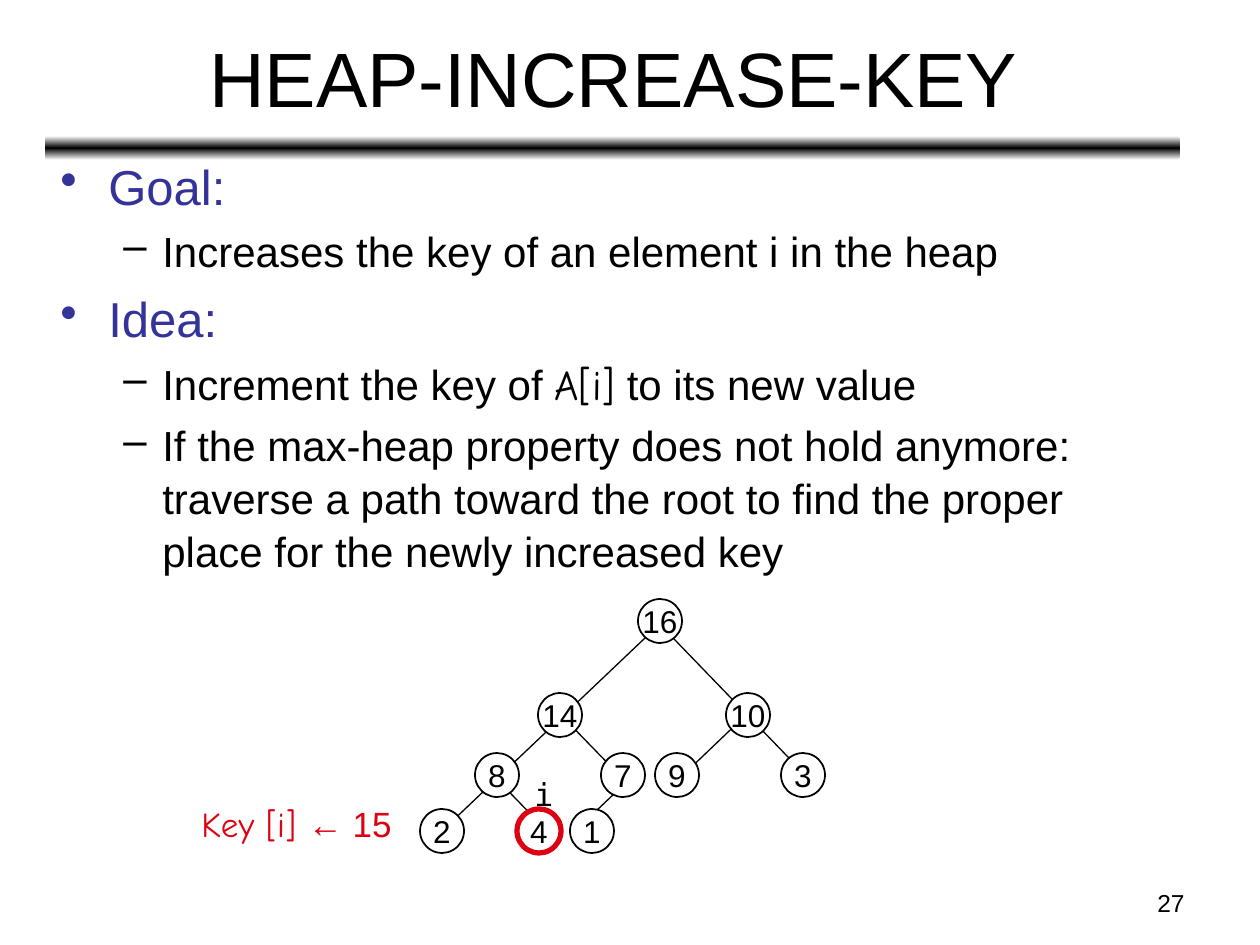
from copy import deepcopy

from pptx import Presentation
from pptx.dml.color import RGBColor
from pptx.enum.shapes import MSO_CONNECTOR, MSO_SHAPE
from pptx.enum.text import MSO_ANCHOR as ANCHOR, PP_ALIGN as ALIGN
from pptx.oxml.ns import qn
from pptx.util import Emu, Pt

PX_PER_INCH = 126
BLACK, WHITE, BLUE, RED = "000000", "FFFFFF", "333399", "DD0111"
SANS, COMIC, MONO = "Arial", "Comic Neue", "DejaVu Sans Mono"

# Bullet mark, left margin and hang (px), text size, colour
LEVELS = [("•", 48, 48, 28, BLUE), ("–", 102, 39, 24, BLACK)]
BODY = [
    (0, [("Goal:", SANS)]),
    (1, [("Increases the key of an element i in the heap", SANS)]),
    (0, [("Idea:", SANS)]),
    (1, [("Increment the key of ", SANS), ("A[i]", COMIC),
         (" to its new value", SANS)]),
    (1, [("If the max-heap property does not hold anymore: traverse a path "
          "toward the root to find the proper place for the newly increased "
          "key", SANS)]),
]

NODE_SIZE = 44
# Top of each heap level, then the key and left of each node on it
HEAP = [
    (599, [(16, 638)]),
    (693, [(14, 538), (10, 726)]),
    (753, [(8, 475), (7, 601), (9, 655), (3, 781)]),
    (809, [(2, 420), (4, 517), (1, 570)]),
]
CHANGED_KEY = 4
# The two outer branches run behind several nodes
EDGES = [
    (576, 830, 633, 776), (678, 780, 748, 713), (551, 835, 483, 765),
    (625, 781, 557, 711), (815, 785, 646, 610), (444, 829, 664, 620),
]


def px(length):
    return Emu(round(length * 914400 / PX_PER_INCH))


def rgb(value):
    return RGBColor.from_string(value)


def add_runs(para, runs, size, color):
    for text, font in runs:
        span = para.add_run()
        span.text = text
        span.font.name = font
        span.font.size = Pt(size)
        span.font.color.rgb = rgb(color)


def add_text(page, frame, runs, size, color=BLACK, align=ALIGN.LEFT,
             anchor=ANCHOR.TOP, wrap=True):
    box = page.shapes.add_textbox(*map(px, frame))
    box.text_frame.word_wrap = wrap
    box.text_frame.vertical_anchor = anchor
    para = box.text_frame.paragraphs[0]
    para.alignment = align
    add_runs(para, runs, size, color)


def add_title_bar(page):
    bar = page.shapes.add_shape(MSO_SHAPE.ROUNDED_RECTANGLE,
                                *map(px, (45, 136, 1135, 24)))
    bar.shadow.inherit = False
    bar.line.fill.background()
    bar.fill.gradient()
    bar.fill.gradient_angle = 90
    stop_list = bar.fill.gradient_stops and next(
        bar._element.spPr.iter(qn("a:gsLst")))
    stop_list.insert(1, deepcopy(stop_list[0]))
    for stop, position, color in zip(bar.fill.gradient_stops, (0, 0.5, 1),
                                     (WHITE, BLACK, WHITE)):
        stop.position = position
        stop.color.rgb = rgb(color)


def set_bullet(para, mark, margin, hang):
    props = para._p.get_or_add_pPr()
    props.set("marL", str(px(margin)))
    props.set("indent", str(-px(hang)))
    props.makeelement(qn("a:buChar"))
    bullet = props.makeelement(qn("a:buChar"), {"char": mark})
    props.append(bullet)


def add_outline(page):
    box = page.shapes.add_textbox(*map(px, (48, 147, 1134, 699)))
    box.text_frame.word_wrap = True
    for index, (level, runs) in enumerate(BODY):
        mark, margin, hang, size, color = LEVELS[level]
        para = (box.text_frame.add_paragraph() if index
                else box.text_frame.paragraphs[0])
        para.level = level
        set_bullet(para, mark, margin, hang)
        para.line_spacing = 1.05
        para.space_before = Pt(0.2 * size if index else 0)
        add_runs(para, runs, size, color)


def add_edge(page, ends):
    edge = page.shapes.add_connector(MSO_CONNECTOR.STRAIGHT, *map(px, ends))
    edge.line.color.rgb = rgb(BLACK)
    edge.line.width = Pt(0.75)
    props = edge._element.spPr
    props.append(props.makeelement(qn("a:effectLst")))


def add_node(page, key, left, top):
    node = page.shapes.add_shape(
        MSO_SHAPE.OVAL, *map(px, (left, top, NODE_SIZE, NODE_SIZE)))
    node.shadow.inherit = False
    node.fill.solid()
    node.fill.fore_color.rgb = rgb(WHITE)
    changed = key == CHANGED_KEY
    node.line.color.rgb = rgb(RED if changed else BLACK)
    node.line.width = Pt(3 if changed else 1)
    frame = node.text_frame
    frame.word_wrap = False
    frame.vertical_anchor = ANCHOR.MIDDLE
    frame.paragraphs[0].alignment = ALIGN.CENTER
    add_runs(frame.paragraphs[0], [(str(key), SANS)], 18, BLACK)


def add_heap(page):
    for ends in EDGES:
        add_edge(page, ends)
    for top, nodes in HEAP:
        for key, left in nodes:
            add_node(page, key, left, top)


def main():
    deck = Presentation()
    deck.slide_width, deck.slide_height = px(1260), px(945)
    page = deck.slides.add_slide(deck.slide_layouts[6])
    add_title_bar(page)
    add_text(page, (903, 882, 294, 44), [("27", SANS)], 14, align=ALIGN.RIGHT)
    add_text(page, (47, 14, 1134, 125), [("HEAP-INCREASE-KEY", SANS)], 44,
             align=ALIGN.CENTER, anchor=ANCHOR.MIDDLE)
    add_outline(page)
    add_heap(page)
    add_text(page, (522, 769, 33, 50), [("i", MONO)], 18, wrap=False)
    add_text(page, (189, 796, 224, 54), [("Key [i] ", COMIC), ("← 15", SANS)],
             20, RED, wrap=False)
    deck.save("out.pptx")


if __name__ == "__main__":
    main()
